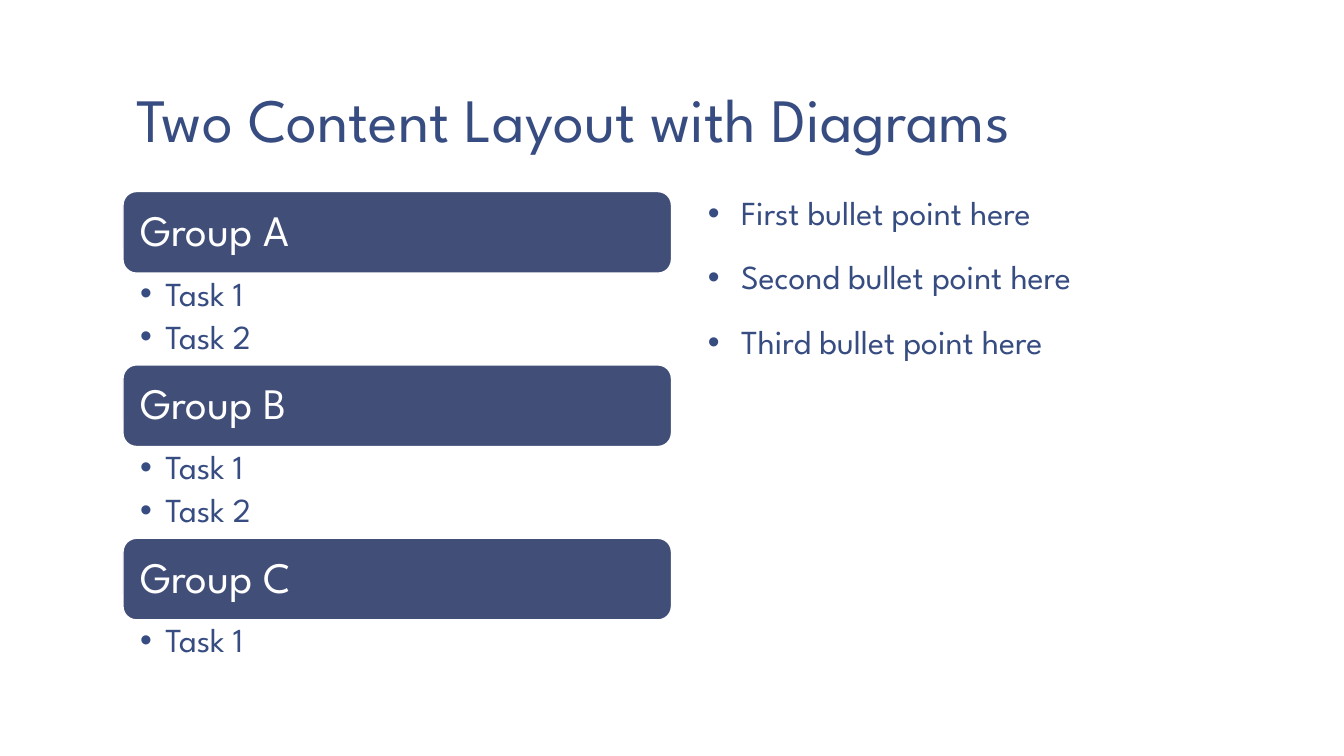
from dataclasses import dataclass

from lxml import etree
from pptx import Presentation
from pptx.dml.color import RGBColor
from pptx.enum.shapes import MSO_SHAPE
from pptx.enum.text import MSO_ANCHOR, MSO_AUTO_SIZE, PP_ALIGN
from pptx.oxml.ns import qn
from pptx.util import Pt

ROUNDED = MSO_SHAPE.ROUNDED_RECTANGLE
TOP, MIDDLE, BOTTOM = MSO_ANCHOR.TOP, MSO_ANCHOR.MIDDLE, MSO_ANCHOR.BOTTOM
NO_AUTOFIT = MSO_AUTO_SIZE.NONE
LEFT = PP_ALIGN.LEFT

EMU_PER_PX = 9144  # 100 px to the inch
FONT, BULLET_FONT = "League Spartan", "Arial"
NAVY, SLATE, WHITE = "374C81", "414E77", "FFFFFF"

COLUMN_LEFT, COLUMN_WIDTH = 122, 544
GROUPS_TOP, HEADER_HEIGHT = 190, 81
TASK_HEIGHT, LIST_PADDING = 35, 21


@dataclass(frozen=True)
class TextStyle:
    size: int
    color: str
    line_spacing: float
    space_before: float = 0
    space_after: float = 0
    bullet_indent: int = 0


@dataclass(frozen=True)
class TaskGroup:
    name: str
    tasks: tuple[str, ...]


TITLE_STYLE = TextStyle(44, NAVY, 0.85)
HEADER_STYLE = TextStyle(31, WHITE, 0.9)
TASK_STYLE = TextStyle(24, NAVY, 0.9, space_after=4.8, bullet_indent=25)
POINT_STYLE = TextStyle(24, NAVY, 0.95, space_before=18.7, bullet_indent=33)

TITLE = "Two Content Layout with Diagrams"
GROUPS = (
    TaskGroup("Group A", ("Task 1", "Task 2")),
    TaskGroup("Group B", ("Task 1", "Task 2")),
    TaskGroup("Group C", ("Task 1",)),
)
POINTS = (
    "First bullet point here",
    "Second bullet point here",
    "Third bullet point here",
)


def px(length: int) -> int:
    return length * EMU_PER_PX


def rgb(color: str) -> RGBColor:
    return RGBColor.from_string(color)


def place(shape, left: int, top: int, width: int, height: int) -> None:
    shape.left, shape.top = px(left), px(top)
    shape.width, shape.height = px(width), px(height)


def set_bullet(paragraph, indent: int) -> None:
    properties = paragraph._p.get_or_add_pPr()
    properties.set("marL", str(px(indent)))
    properties.set("indent", str(-px(indent)))
    etree.SubElement(properties, qn("a:buFont")).set("typeface", BULLET_FONT)
    etree.SubElement(properties, qn("a:buChar")).set("char", "•")


def write(shape, lines: tuple[str, ...], style: TextStyle, anchor,
          insets: tuple[int, int, int, int]) -> None:
    """Fill a shape with one paragraph per line; insets run left, top, right, bottom."""
    frame = shape.text_frame
    frame.word_wrap = True
    frame.auto_size = NO_AUTOFIT
    frame.vertical_anchor = anchor
    (frame.margin_left, frame.margin_top,
     frame.margin_right, frame.margin_bottom) = map(px, insets)
    for index, line in enumerate(lines):
        paragraph = frame.add_paragraph() if index else frame.paragraphs[0]
        if style.bullet_indent:
            set_bullet(paragraph, style.bullet_indent)
        paragraph.alignment = LEFT
        paragraph.line_spacing = style.line_spacing
        paragraph.space_before = Pt(style.space_before if index else 0)
        paragraph.space_after = Pt(style.space_after)
        run = paragraph.add_run()
        run.text = line
        run.font.name = FONT
        run.font.size = Pt(style.size)
        run.font.color.rgb = rgb(style.color)


def draw_group(slide, group: TaskGroup, top: int) -> int:
    """Draw a header with its task list and return the top of the next group."""
    header = slide.shapes.add_shape(ROUNDED, 0, 0, 0, 0)
    place(header, COLUMN_LEFT, top, COLUMN_WIDTH, HEADER_HEIGHT)
    header.shadow.inherit = False
    header.fill.solid()
    header.fill.fore_color.rgb = rgb(SLATE)
    header.line.color.rgb = rgb(WHITE)
    header.line.width = Pt(1)
    write(header, (group.name,), HEADER_STYLE, MIDDLE, (13, 13, 13, 13))

    list_top = top + HEADER_HEIGHT
    list_height = LIST_PADDING + TASK_HEIGHT * len(group.tasks)
    task_list = slide.shapes.add_textbox(0, 0, 0, 0)
    place(task_list, COLUMN_LEFT, list_top, COLUMN_WIDTH, list_height)
    write(task_list, group.tasks, TASK_STYLE, TOP, (17, 4, 24, 4))
    return list_top + list_height


def main() -> None:
    deck = Presentation()
    deck.slide_width, deck.slide_height = px(1333), px(750)
    slide = deck.slides.add_slide(deck.slide_layouts[1])
    slide.background.fill.solid()
    slide.background.fill.fore_color.rgb = rgb(WHITE)

    title, points = slide.placeholders
    place(title, COLUMN_LEFT, 8, 1111, 153)
    write(title, (TITLE,), TITLE_STYLE, BOTTOM, (13, 7, 13, 7))
    place(points, 689, 186, COLUMN_WIDTH, 489)
    write(points, POINTS, POINT_STYLE, TOP, (13, 7, 13, 7))

    top = GROUPS_TOP
    for group in GROUPS:
        top = draw_group(slide, group, top)

    deck.save("out.pptx")


if __name__ == "__main__":
    main()
